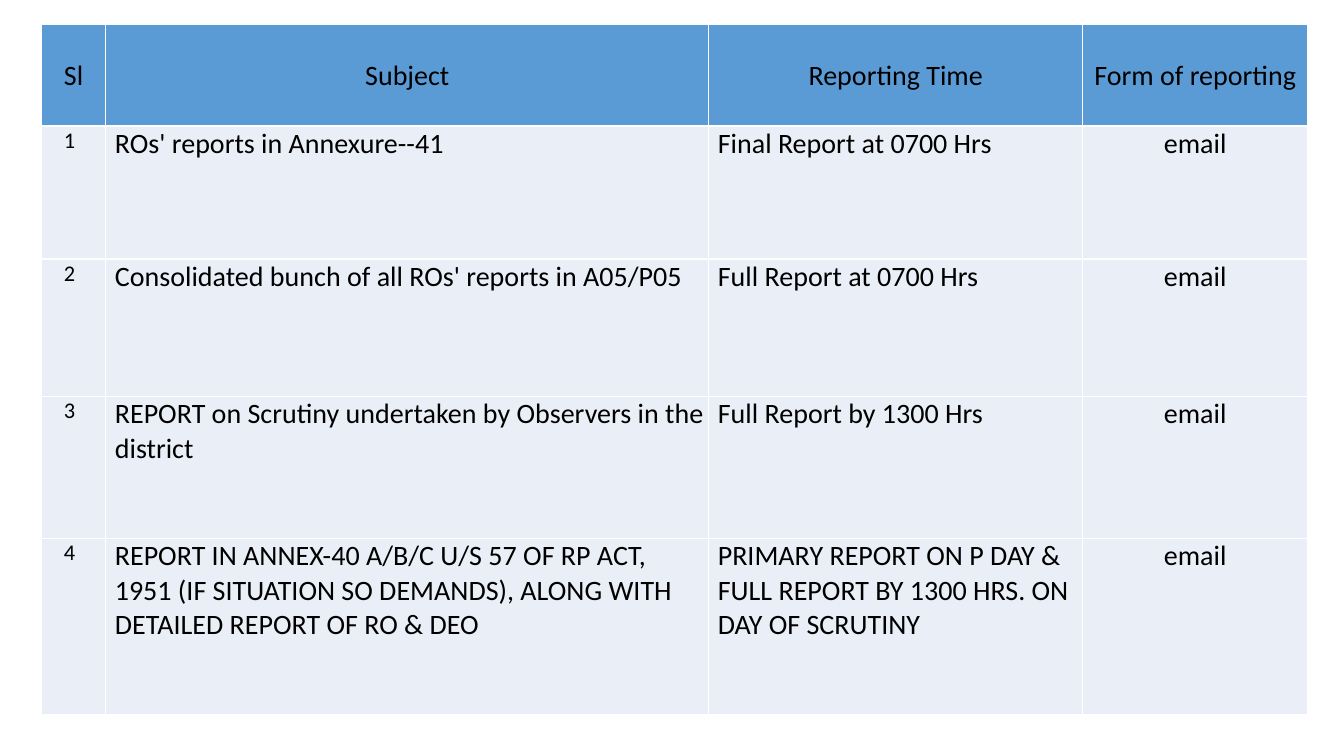
from lxml import etree
from pptx import Presentation
from pptx.dml.color import RGBColor
from pptx.enum import text
from pptx.oxml import ns
from pptx.util import Inches, Pt

HEADINGS = ("Sl", "Subject", "Reporting Time", "Form of reporting")
REPORTS = [
    ("ROs' reports in Annexure--41", "Final Report at 0700 Hrs"),
    ("Consolidated bunch of all ROs' reports in A05/P05", "Full Report at 0700 Hrs"),
    ("REPORT on Scrutiny undertaken by Observers in the district",
     "Full Report by 1300 Hrs"),
    ("REPORT IN ANNEX-40 A/B/C U/S 57 OF RP ACT, 1951 (IF SITUATION SO DEMANDS), "
     "ALONG WITH DETAILED REPORT OF RO & DEO",
     "PRIMARY REPORT ON P DAY & FULL REPORT BY 1300 HRS. ON DAY OF SCRUTINY"),
]
REPORTING_FORM = "email"
COLORS = {"header": "5B9BD5", "body": "EAEFF7", "text": "000000", "border": "FFFFFF"}
FONT = "Calibri"
LEFT, TOP = 0.41, 0.24
COLUMN_WIDTHS = (0.64, 5.98, 3.71, 2.23)
ROW_HEIGHTS = (1.01, 1.32, 1.36, 1.41, 1.75)
TIGHT, WIDE = 0.01, 0.09

CENTER, START = text.PP_ALIGN.CENTER, text.PP_ALIGN.LEFT
# Body columns: alignment, font size, left margin, right margin
BODY_STYLES = (
    (CENTER, 16, TIGHT, WIDE),
    (START, 20, WIDE, TIGHT),
    (START, 20, WIDE, TIGHT),
    (CENTER, 20, TIGHT, TIGHT),
)
HEADER_STYLE = (CENTER, 20, TIGHT, TIGHT)


def add_borders(cell):
    properties = cell._tc.get_or_add_tcPr()
    for side in ("lnL", "lnR", "lnT", "lnB"):
        line = etree.SubElement(properties, ns.qn(f"a:{side}"), w=str(Pt(1)))
        fill = etree.SubElement(line, ns.qn("a:solidFill"))
        etree.SubElement(fill, ns.qn("a:srgbClr"), val=COLORS["border"])


def fill_cell(cell, wording, style, background, anchor):
    align, size, left, right = style
    add_borders(cell)
    cell.fill.solid()
    cell.fill.fore_color.rgb = RGBColor.from_string(COLORS[background])
    cell.margin_left, cell.margin_right = Inches(left), Inches(right)
    cell.margin_top, cell.margin_bottom = Inches(TIGHT), 0
    cell.vertical_anchor = anchor
    paragraph = cell.text_frame.paragraphs[0]
    paragraph.alignment = align
    run = paragraph.add_run()
    run.text = wording
    run.font.name = FONT
    run.font.size = Pt(size)
    run.font.bold = False
    run.font.color.rgb = RGBColor.from_string(COLORS["text"])


def main():
    deck = Presentation()
    deck.slide_width, deck.slide_height = Inches(13.33), Inches(7.5)
    slide = deck.slides.add_slide(deck.slide_layouts[6])

    schedule = slide.shapes.add_table(
        len(ROW_HEIGHTS), len(COLUMN_WIDTHS), Inches(LEFT), Inches(TOP),
        Inches(sum(COLUMN_WIDTHS)), Inches(sum(ROW_HEIGHTS))).table
    schedule.horz_banding = False
    for column, width in zip(schedule.columns, COLUMN_WIDTHS):
        column.width = Inches(width)
    for row, height in zip(schedule.rows, ROW_HEIGHTS):
        row.height = Inches(height)

    for column, heading in enumerate(HEADINGS):
        fill_cell(schedule.cell(0, column), heading, HEADER_STYLE, "header",
                  text.MSO_ANCHOR.MIDDLE)
    for number, (subject, time) in enumerate(REPORTS, start=1):
        entries = (str(number), subject, time, REPORTING_FORM)
        for column, (entry, style) in enumerate(zip(entries, BODY_STYLES)):
            fill_cell(schedule.cell(number, column), entry, style, "body",
                      text.MSO_ANCHOR.TOP)

    deck.save("out.pptx")


if __name__ == "__main__":
    main()
